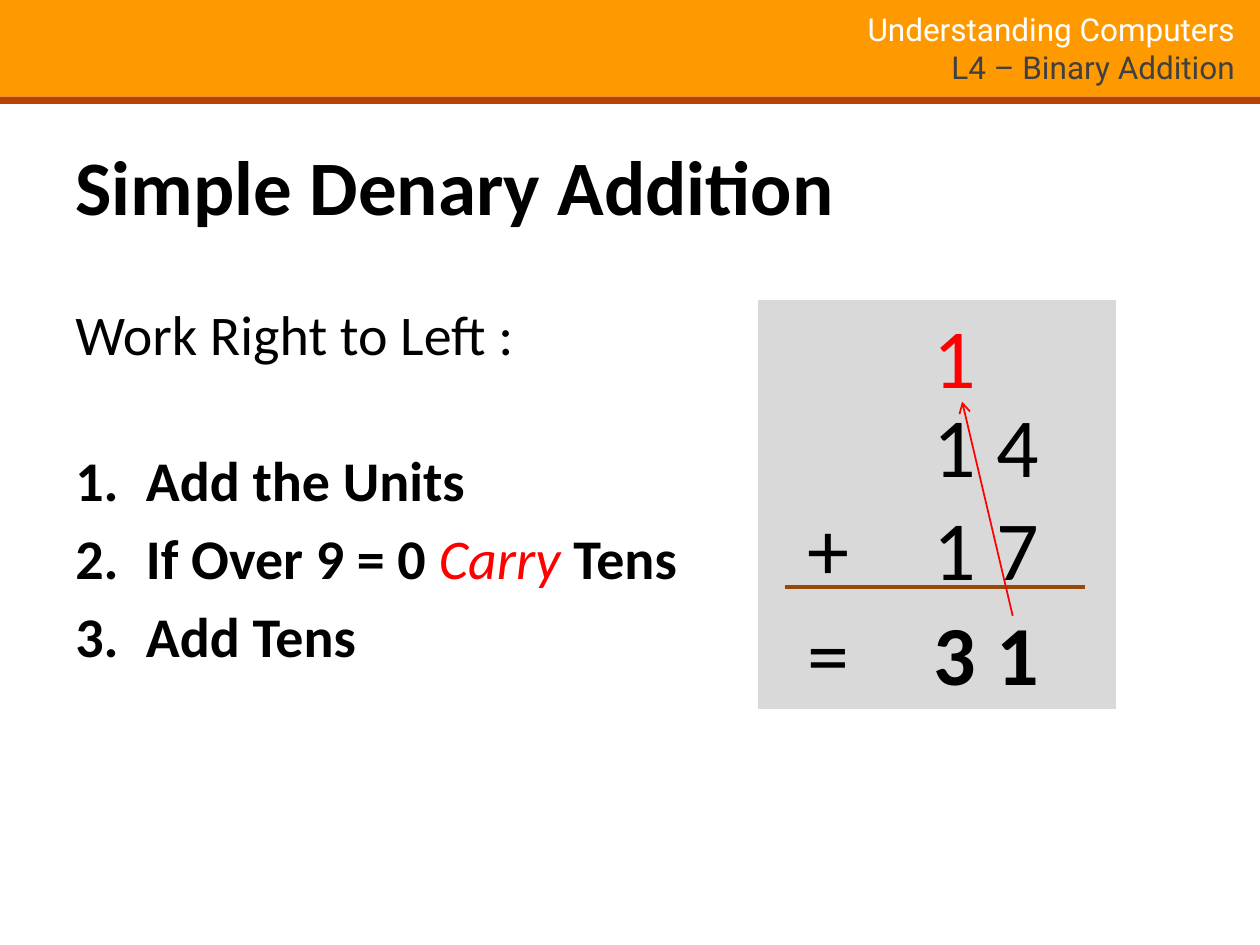
from pptx import Presentation
from pptx.dml.color import RGBColor
from pptx.enum.shapes import MSO_CONNECTOR, MSO_SHAPE
from pptx.enum.text import MSO_ANCHOR, PP_ALIGN
from pptx.oxml.ns import qn
from pptx.util import Inches, Pt
from lxml.etree import SubElement

HUES = {"band": "FF9900", "rule": "BB4301", "white": "FFFFFF", "grey": "404040",
        "ink": "000000", "panel": "D9D9D9", "carry": "FF0000", "sum": "984807"}
WIDE, HIGH = Inches(10), Inches(7.5)


def hue(name):
    return RGBColor.from_string(HUES[name])


def within(box, x, y, w=0, h=0):
    """Turn shares of a box into slide lengths."""
    left, top, wide, high = box
    return (int(left + x * wide), int(top + y * high), int(w * wide), int(h * high))


def put(thing, values):
    for name, value in values.items():
        setattr(thing, name, value)


def write(para, text, size, color="ink", face="Calibri", **style):
    """Add one run; a vertical tab in the text breaks the line."""
    for count, part in enumerate(text.split("\v")):
        if count:
            para.add_line_break()
        run = para.add_run()
        run.text = part
        put(run.font, {"size": Pt(size), "name": face, **style})
        run.font.color.rgb = hue(color)


def label(slide, box, align, wrap=True):
    frame = slide.shapes.add_textbox(*box).text_frame
    put(frame, {"word_wrap": wrap, "vertical_anchor": MSO_ANCHOR.TOP})
    frame.paragraphs[0].alignment = align
    return frame


def block(slide, box, color):
    shape = slide.shapes.add_shape(MSO_SHAPE.RECTANGLE, *box)
    shape.shadow.inherit = False
    shape.fill.solid()
    shape.fill.fore_color.rgb = hue(color)
    shape.line.fill.background()
    return shape


def stroke(slide, start, end, color, width, arrow=False):
    line = slide.shapes.add_connector(MSO_CONNECTOR.STRAIGHT, *start[:2], *end[:2])
    line.line.color.rgb = hue(color)
    line.line.width = Pt(width)
    if arrow:
        SubElement(line.line._get_or_add_ln(), qn("a:tailEnd"), type="arrow")
    SubElement(line._element.spPr, qn("a:effectLst"))


def header(slide, box):
    block(slide, within(box, 0, 0, 1, 0.93), "band")
    block(slide, within(box, 0, 0.93, 1, 0.07), "rule")
    para = label(slide, within(box, 0.5, 0.04, 0.49, 0.83), PP_ALIGN.RIGHT).paragraphs[0]
    write(para, "Understanding Computers\v", 18, "white", "Roboto")
    write(para, "L4 – Binary Addition", 18, "grey", "Roboto")


def heading(slide, box):
    title = slide.shapes.title
    put(title, dict(zip(("left", "top", "width", "height"), box)))
    put(title.text_frame, {"vertical_anchor": MSO_ANCHOR.TOP, "word_wrap": True})
    para = title.text_frame.paragraphs[0]
    para.alignment = PP_ALIGN.LEFT
    write(para, "Simple Denary Addition", 44, bold=True)


def steps(slide, box):
    frame = label(slide, box, PP_ALIGN.LEFT)
    write(frame.paragraphs[0], "Work Right to Left :", 32)
    strong, slant = {"bold": True}, {"color": "carry", "italic": True}
    items = [[("Add the Units", strong)],
             [("If Over 9 = 0 ", strong), ("Carry", slant), (" Tens", strong)],
             [("Add Tens", strong)]]
    for count, item in enumerate(items):
        para = frame.add_paragraph()
        para.space_before = Pt(6.4 if count else 45)
        props = para._p.get_or_add_pPr()
        props.set("marL", str(Inches(0.56)))
        props.set("indent", str(-Inches(0.56)))
        SubElement(props, qn("a:buFont"), typeface="+mj-lt")
        SubElement(props, qn("a:buAutoNum"), type="arabicPeriod")
        for text, style in item:
            write(para, text, 32, **style)


def working(slide, box):
    panel = block(slide, box, "panel")
    panel.line.color.rgb = hue("white")
    panel.line.width = Pt(2)

    # Sign, tens and units columns; carry, addend and answer rows
    cols = (0.2, 0.55, 0.725)
    rows = {0: " 1 ", 0.215: " 14", 0.465: "+17", 0.72: "=31"}
    cell = 0.19
    for top, signs in rows.items():
        for mid, sign in zip(cols, signs):
            if sign == " ":
                continue
            spot = within(box, mid - cell / 2, top, cell, 0.28)
            para = label(slide, spot, PP_ALIGN.CENTER, False).paragraphs[0]
            write(para, sign, 48, "ink" if top else "carry",
                  bold=top == 0.72 and sign.isdigit())

    # Sum line, and the arrow that carries the ten
    stroke(slide, within(box, 0.08, 0.7), within(box, 0.91, 0.7), "sum", 2.25)
    stroke(slide, within(box, 0.71, 0.77), within(box, 0.57, 0.25), "carry", 1, True)


def main():
    deck = Presentation()
    put(deck, {"slide_width": WIDE, "slide_height": HIGH})
    slide = deck.slides.add_slide(deck.slide_layouts[5])
    page = (0, 0, WIDE, HIGH)
    header(slide, within(page, 0, 0, 1, 0.11))
    heading(slide, within(page, 0.05, 0.14, 0.9, 0.17))
    steps(slide, within(page, 0.05, 0.31, 0.51, 0.43))
    working(slide, within(page, 0.6, 0.316, 0.287, 0.436))
    deck.save("out.pptx")


if __name__ == "__main__":
    main()
